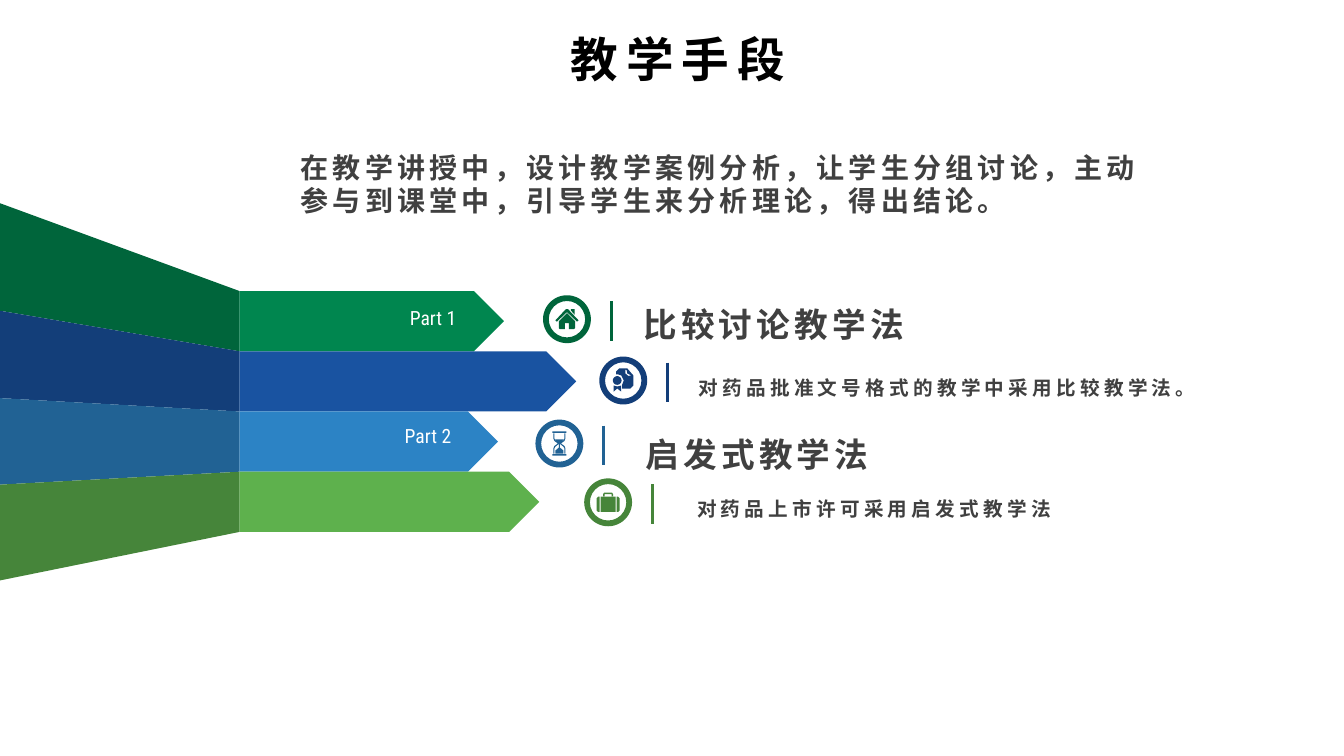
"""Build the teaching-methods slide with four folded ribbons and their icons."""
from dataclasses import dataclass
from math import cos, pi, sin

from lxml.etree import SubElement
from pptx import Presentation
from pptx.dml.color import RGBColor
from pptx.enum.shapes import MSO_CONNECTOR as Connector, MSO_SHAPE as Preset
from pptx.enum.text import MSO_ANCHOR as Anchor, MSO_AUTO_SIZE as AutoSize, PP_ALIGN as Align
from pptx.oxml.ns import qn
from pptx.slide import Slide
from pptx.text.text import TextFrame
from pptx.util import Emu, Inches, Pt

Point = tuple[float, float]
Contour = list[Point]

COLUMNS, ROWS = 160, 90
WIDTH, HEIGHT = Inches(13.33), Inches(7.5)
COLUMN, ROW = WIDTH / COLUMNS, HEIGHT / ROWS
ICON_STEP = 0.12

FOLD, RIBBON_TOP, RIBBON_PITCH = 28.5, 34.65, 7.17
WEDGE_EDGES = [24.2, 37, 47.4, 57.7, 69.1]
BADGE, RING = 5.7, 0.12
BAR_GAP, BAR_DROP, BAR_HEIGHT = 5.28, 0.22, 4.7

CJK, LATIN = "Noto Sans CJK SC", "Roboto Condensed"
COLORS = {
    "title": "000000", "text": "404040", "label": "FFFFFF",
    "green": "00864F", "deep green": "00653B",
    "navy": "1953A1", "deep navy": "133E79",
    "sky": "2C83C5", "deep sky": "216294",
    "leaf": "5EB14D", "deep leaf": "46853A",
}


@dataclass(frozen=True)
class Style:
    size: float
    color: str
    font: str = CJK
    bold: bool = True
    tracking: float = 3
    line_spacing: float | None = None


@dataclass(frozen=True)
class Caption:
    words: str
    left: float
    top: float
    width: float
    height: float
    style: Style


@dataclass(frozen=True)
class Ribbon:
    color: str
    length: float
    badge_center: Point
    icon: list[Contour]


def mirror(contour: Contour) -> Contour:
    return [(-x, y) for x, y in contour]


def box(left: float, top: float, right: float, bottom: float) -> Contour:
    return [(left, top), (right, top), (right, bottom), (left, bottom)]


def circle(x: float, y: float, radius: float, sides: int = 24) -> Contour:
    angles = [2 * pi * side / sides for side in range(sides)]
    return [(x + radius * cos(angle), y + radius * sin(angle)) for angle in angles]


GLASS = [(-6, -10), (-6, -5), (-5, -2.5), (-1.5, 0), (-5, 2.5), (-6, 5), (-6, 10), (-5, 10),
         (-5, 5), (-4, 3.3), (-0.7, 0.5), (-0.7, -0.5), (-4, -3.3), (-5, -5), (-5, -10)]
SAND = [(-4, -4), (4, -4), (0.4, -0.5), (0.4, 4), (4, 7), (4, 10),
        (-4, 10), (-4, 7), (-0.4, 4), (-0.4, -0.5)]
HOURGLASS = [box(-7, -12, 7, -10.5), box(-7, 10.5, 7, 12), GLASS, mirror(GLASS), SAND]

ROOF = [(-11.5, 1.2), (-1, -10), (1, -10), (11.5, 1.2), (10, 2.5), (0, -7), (-10, 2.5)]
CHIMNEY = [(4, -10), (7.5, -10), (7.5, -4.5), (4, -8.5)]
WALLS = [(-8, 2), (0, -6), (8, 2), (8, 9), (7, 10), (2, 10),
         (2, 4), (-2, 4), (-2, 10), (-7, 10), (-8, 9)]
HOUSE = [ROOF, CHIMNEY, WALLS]

HANDLE = [(-5, -6), (-5, -8), (-4, -9.5), (4, -9.5), (5, -8), (5, -6),
          (3.5, -6), (3.5, -8), (-3.5, -8), (-3.5, -6)]
CASE_END = [(-8.5, -5.5), (-10, -5.5), (-11.5, -4), (-11.5, 8), (-10, 9.5), (-8.5, 9.5)]
SUITCASE = [HANDLE, box(-7.5, -5.5, 7.5, 9.5), CASE_END, mirror(CASE_END)]

PAGE = [(-7, -6), (-7, -9), (-4, -12), (4, -12), (10, -5), (10, 5), (7, 8),
        (-1, 8), (-1, 4), (0.5, 0), (-2, -5), (-5, -6)]
PAGE_FOLD = [(2, -11), (2, -7), (5, -4.5), (8, -5), (4, -7), (3.5, -10)]
SEAL_RIBBON = [(-9.5, 5), (-6, 6), (-2, 5), (-2, 11), (-6, 8), (-9.5, 11)]
CERTIFICATE = [PAGE, PAGE_FOLD, circle(-6, 0, 4.3), SEAL_RIBBON]

RIBBONS = [
    Ribbon("green", 31.5, (67.5, 38), HOUSE),
    Ribbon("navy", 40.1, (74.2, 45.3), CERTIFICATE),
    Ribbon("sky", 30.8, (66.6, 52.8), HOURGLASS),
    Ribbon("leaf", 35.7, (72.4, 59.8), SUITCASE),
]

TITLE = Style(34, "title", tracking=6)
INTRO = Style(20, "text")
METHOD = Style(24, "text", line_spacing=1.5)
DETAIL = Style(14, "text", line_spacing=1.5)
PART = Style(14, "label", LATIN, False, 0)

HEADING = Caption("教学手段", 43.3, 3, 74.8, 8, TITLE)
CAPTIONS = [
    Caption("Part 1", 47.6, 35.8, 10.4, 4.1, PART),
    Caption("Part 2", 47, 49.9, 10.4, 4.1, PART),
    Caption("启发式教学法", 75.7, 48.7, 72.8, 8.5, METHOD),
    Caption("对药品上市许可采用启发式教学法", 81.8, 57.2, 72.8, 5.4, DETAIL),
    Caption("比较讨论教学法", 75.4, 33.2, 72.8, 8.5, METHOD),
    Caption("对药品批准文号格式的教学中采用比较教学法。", 82, 42.8, 72.8, 5.4, DETAIL),
    Caption("在教学讲授中，设计教学案例分析，让学生分组讨论，主动参与到课堂中，"
            "引导学生来分析理论，得出结论。", 34.6, 17.3, 103.7, 9.2, INTRO),
]


def across(columns: float) -> Emu:
    return Emu(round(columns * COLUMN))


def down(rows: float) -> Emu:
    return Emu(round(rows * ROW))


def frame(left: float, top: float, width: float, height: float) -> tuple[Emu, ...]:
    return across(left), down(top), across(width), down(height)


def paint(shape, color: str) -> None:
    shape.fill.solid()
    shape.fill.fore_color.rgb = RGBColor.from_string(COLORS[color])
    shape.line.fill.background()
    shape.shadow.inherit = False


def draw_outline(slide: Slide, contours: list[Contour], color: str) -> None:
    corners = [[(across(x), down(y)) for x, y in contour] for contour in contours]
    pen = slide.shapes.build_freeform(*corners[0][0], scale=1.0)
    for index, contour in enumerate(corners):
        if index:
            pen.move_to(*contour[0])
        pen.add_line_segments(contour[1:], close=True)
    paint(pen.convert_to_shape(), color)


def draw_ribbon(slide: Slide, ribbon: Ribbon, index: int) -> None:
    top = RIBBON_TOP + index * RIBBON_PITCH
    band = slide.shapes.add_shape(Preset.PENTAGON, *frame(FOLD, top, ribbon.length, RIBBON_PITCH))
    paint(band, ribbon.color)
    wedge = [(0, WEDGE_EDGES[index]), (FOLD, top), (FOLD, top + RIBBON_PITCH),
             (0, WEDGE_EDGES[index + 1])]
    draw_outline(slide, [wedge], f"deep {ribbon.color}")


def draw_badge(slide: Slide, ribbon: Ribbon) -> None:
    x, y = ribbon.badge_center
    shade = f"deep {ribbon.color}"
    ring = slide.shapes.add_shape(Preset.DONUT, *frame(x - BADGE / 2, y - BADGE / 2, BADGE, BADGE))
    ring.adjustments[0] = RING
    paint(ring, shade)
    icon = [[(x + ICON_STEP * dx, y + ICON_STEP * dy) for dx, dy in contour]
            for contour in ribbon.icon]
    draw_outline(slide, icon, shade)

    bar_x, bar_top = across(x + BAR_GAP), y + BAR_DROP - BAR_HEIGHT / 2
    bar = slide.shapes.add_connector(
        Connector.STRAIGHT, bar_x, down(bar_top), bar_x, down(bar_top + BAR_HEIGHT))
    bar.line.color.rgb = RGBColor.from_string(COLORS[shade])
    bar.line.width = Pt(2.25)
    SubElement(bar._element.spPr, qn("a:effectLst"))


def write(text: TextFrame, words: str, style: Style) -> None:
    text.word_wrap = True
    paragraph = text.paragraphs[0]
    paragraph.line_spacing = style.line_spacing
    run = paragraph.add_run()
    run.text = words
    run.font.size, run.font.bold, run.font.name = Pt(style.size), style.bold, style.font
    run.font.color.rgb = RGBColor.from_string(COLORS[style.color])
    properties = run._r.get_or_add_rPr()
    properties.set("spc", str(round(style.tracking * 100)))
    SubElement(properties, qn("a:ea"), typeface=style.font)


def draw_heading(slide: Slide, caption: Caption) -> None:
    title = slide.shapes.title
    title.left, title.top, title.width, title.height = frame(
        caption.left, caption.top, caption.width, caption.height)
    write(title.text_frame, caption.words, caption.style)
    title.text_frame.auto_size = AutoSize.NONE
    title.text_frame.vertical_anchor = Anchor.MIDDLE
    title.text_frame.paragraphs[0].alignment = Align.CENTER


def draw_caption(slide: Slide, caption: Caption) -> None:
    area = frame(caption.left, caption.top, caption.width, caption.height)
    text = slide.shapes.add_textbox(*area).text_frame
    write(text, caption.words, caption.style)
    text.auto_size = AutoSize.SHAPE_TO_FIT_TEXT


def main() -> None:
    deck = Presentation()
    deck.slide_width, deck.slide_height = WIDTH, HEIGHT
    slide = deck.slides.add_slide(deck.slide_layouts[5])
    draw_heading(slide, HEADING)
    for index, ribbon in enumerate(RIBBONS):
        draw_ribbon(slide, ribbon, index)
    for ribbon in RIBBONS:
        draw_badge(slide, ribbon)
    for caption in CAPTIONS:
        draw_caption(slide, caption)
    deck.save("out.pptx")


if __name__ == "__main__":
    main()
